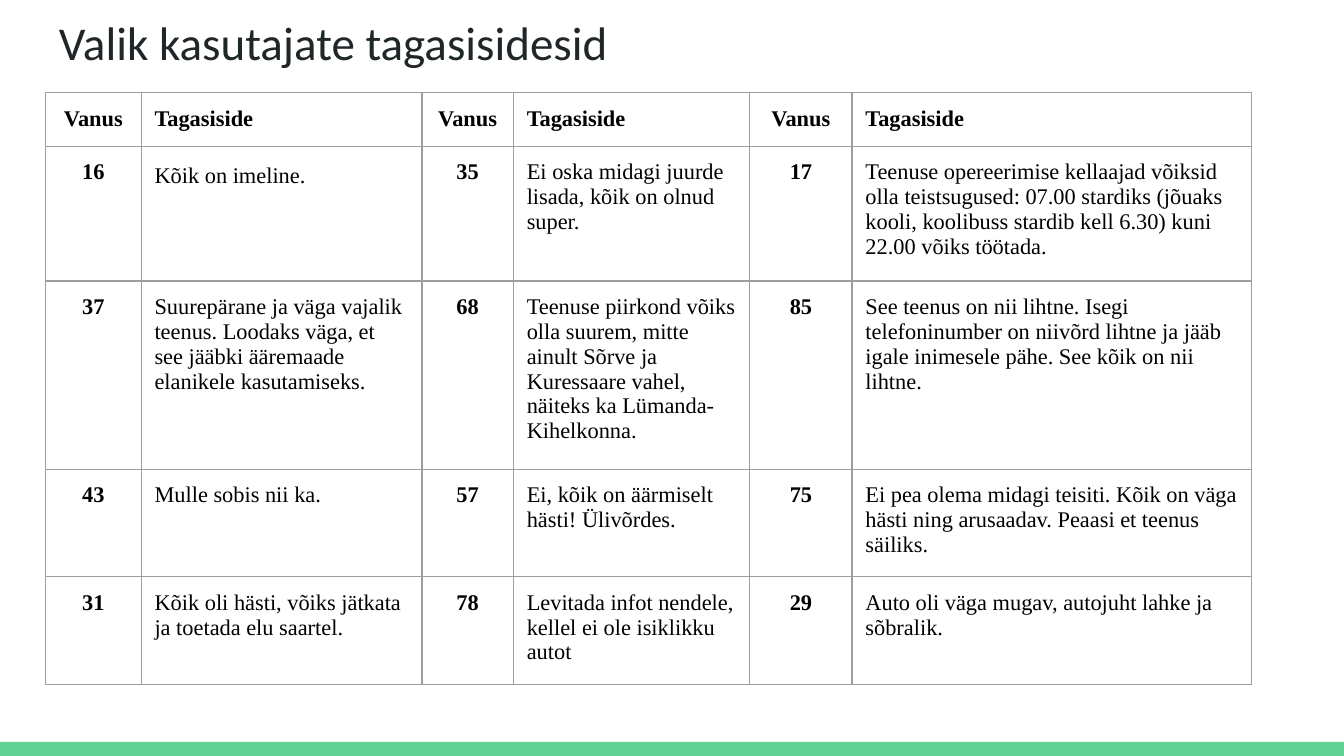
from lxml import etree
from pptx import Presentation
from pptx.dml.color import RGBColor
from pptx.enum.shapes import MSO_SHAPE
from pptx.enum.text import MSO_ANCHOR, PP_ALIGN
from pptx.oxml.ns import qn
from pptx.util import Inches, Pt

RECTANGLE = MSO_SHAPE.RECTANGLE
TOP = MSO_ANCHOR.TOP
LEFT, CENTER = PP_ALIGN.LEFT, PP_ALIGN.CENTER

COLORS = {"title": "202729", "text": "000000", "border": "9E9E9E", "footer": "63D297"}
INSET = Inches(0.1)
COLUMN_WIDTHS = [0.71, 2.09, 0.68, 1.76, 0.76, 2.97]
ROW_HEIGHTS = [0.38] + [0.42] * 4
FEEDBACK = [
    ["Vanus", "Tagasiside"] * 3,
    ["16", "Kõik on imeline.",
     "35", "Ei oska midagi juurde lisada, kõik on olnud super.",
     "17", "Teenuse opereerimise kellaajad võiksid olla teistsugused: 07.00 stardiks "
           "(jõuaks kooli, koolibuss stardib kell 6.30) kuni 22.00 võiks töötada."],
    ["37", "Suurepärane ja väga vajalik teenus. Loodaks väga, et see jääbki "
           "ääremaade elanikele kasutamiseks.",
     "68", "Teenuse piirkond võiks olla suurem, mitte ainult Sõrve ja Kuressaare vahel, "
           "näiteks ka Lümanda- Kihelkonna.",
     "85", "See teenus on nii lihtne. Isegi telefoninumber on niivõrd lihtne ja jääb "
           "igale inimesele pähe. See kõik on nii lihtne."],
    ["43", "Mulle sobis nii ka.",
     "57", "Ei, kõik on äärmiselt hästi! Ülivõrdes.",
     "75", "Ei pea olema midagi teisiti. Kõik on väga hästi ning arusaadav. "
           "Peaasi et teenus säiliks."],
    ["31", "Kõik oli hästi, võiks jätkata ja toetada elu saartel.",
     "78", "Levitada infot nendele, kellel ei ole isiklikku autot",
     "29", "Auto oli väga mugav, autojuht lahke ja sõbralik."],
]


def color(name):
    return RGBColor.from_string(COLORS[name])


def set_font(paragraph, name, size, color_name, bold=False):
    font = paragraph.font
    font.name, font.size, font.bold = name, Pt(size), bold
    font.color.rgb = color(color_name)


def set_insets(holder):
    holder.margin_left = holder.margin_right = INSET
    holder.margin_top = holder.margin_bottom = INSET


def add_borders(cell):
    properties = cell._tc.get_or_add_tcPr()
    for position, side in enumerate(("a:lnL", "a:lnR", "a:lnT", "a:lnB")):
        line = etree.Element(qn(side), w=str(Pt(0.75)))
        fill = etree.SubElement(line, qn("a:solidFill"))
        etree.SubElement(fill, qn("a:srgbClr"), val=COLORS["border"])
        properties.insert(position, line)


def add_footer(slide, left, top, width, height):
    band = slide.shapes.add_shape(
        RECTANGLE, Inches(left), Inches(top), Inches(width), Inches(height))
    band.shadow.inherit = False
    band.fill.solid()
    band.fill.fore_color.rgb = color("footer")
    band.line.fill.background()


def add_title(slide, left, top, width, height):
    frame = slide.shapes.add_textbox(
        Inches(left), Inches(top), Inches(width), Inches(height)).text_frame
    frame.word_wrap = True
    frame.vertical_anchor = TOP
    set_insets(frame)
    title = frame.paragraphs[0]
    title.text = "Valik kasutajate tagasisidesid"
    set_font(title, "Calibri", 25.2, "title")


def add_feedback_table(slide, left, top, width, height):
    holder = slide.shapes.add_table(
        len(FEEDBACK), len(COLUMN_WIDTHS), Inches(left), Inches(top),
        Inches(width), Inches(height))
    table = holder.table
    table.first_row = table.horz_banding = False
    for column, column_width in zip(table.columns, COLUMN_WIDTHS):
        column.width = Inches(column_width)
    for row, row_height in zip(table.rows, ROW_HEIGHTS):
        row.height = Inches(row_height)
    holder.width, holder.height = Inches(width), Inches(height)
    for row_index, entries in enumerate(FEEDBACK):
        for column_index, entry in enumerate(entries):
            cell = table.cell(row_index, column_index)
            is_age = column_index % 2 == 0
            cell.fill.background()
            cell.vertical_anchor = TOP
            set_insets(cell)
            add_borders(cell)
            paragraph = cell.text_frame.paragraphs[0]
            paragraph.text = entry
            paragraph.alignment = CENTER if is_age else LEFT
            set_font(paragraph, "Times New Roman", 12, "text", is_age or row_index == 0)
    table.cell(1, 1).text_frame.paragraphs[0].line_spacing = 1.15


def main():
    presentation = Presentation()
    presentation.slide_width = Inches(10)
    presentation.slide_height = presentation.slide_width * 9 // 16
    slide = presentation.slides.add_slide(presentation.slide_layouts[6])
    add_footer(slide, 0, 5.52, 10, 0.11)
    add_title(slide, 0.34, 0, 9.32, 0.63)
    add_feedback_table(slide, 0.34, 0.69, 3.28, 3.28)
    presentation.save("out.pptx")


if __name__ == "__main__":
    main()
